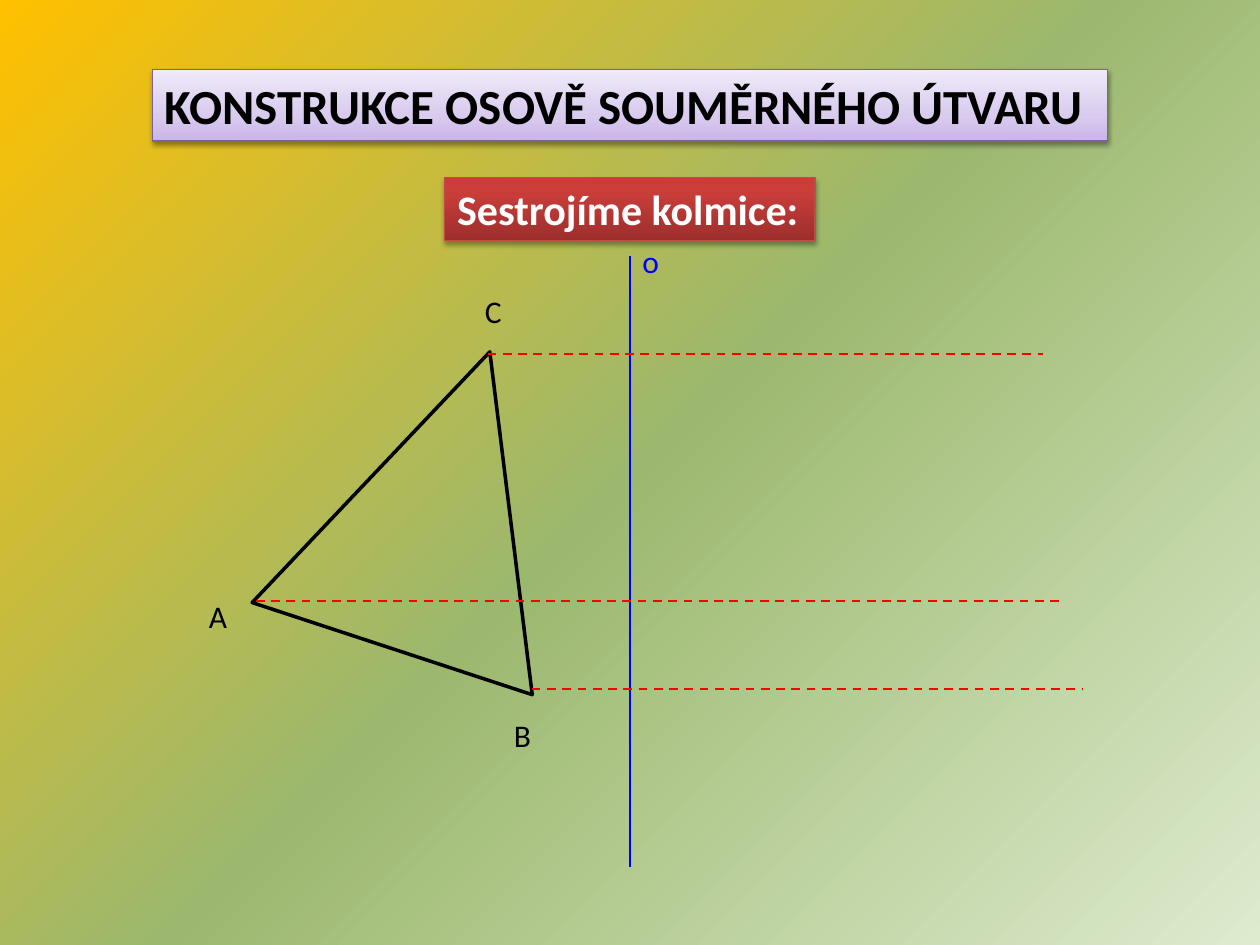
from lxml.etree import SubElement
from pptx import Presentation
from pptx.dml.color import RGBColor
from pptx.enum.dml import MSO_LINE
from pptx.enum.shapes import MSO_CONNECTOR, MSO_SHAPE
from pptx.enum.text import MSO_ANCHOR, MSO_AUTO_SIZE, PP_ALIGN
from pptx.oxml.ns import qn
from pptx.util import Inches, Pt

COLORS = {"black": "000000", "white": "FFFFFF", "axis": "0000FF",
          "perpendicular": "FF0000", "title_line": "7D60A0", "step_line": "BF4C48"}

# Gradient stops: position %, colour, opacity %
BACKGROUND = [(0, "DDEBCF", 100), (50, "9CB86E", 62), (100, "FFC000", 66)]
TITLE_FILL = [(0, "C9B5E8", 100), (35, "D8CBEE", 100), (100, "F0EAF9", 100)]
STEP_FILL = [(0, "9C2F2D", 100), (80, "CB3E3A", 100), (100, "CE3B37", 100)]

# Text, box, size, text colour, line colour, fill, shadow opacity % and distance pt
BANNERS = [
    ("KONSTRUKCE OSOVĚ SOUMĚRNÉHO ÚTVARU", (1.21, 0.55, 7.58, 0.57), 28,
     "black", "title_line", TITLE_FILL, 38, 1.6),
    ("Sestrojíme kolmice:", (3.53, 1.41, 2.94, 0.5), 24,
     "white", "step_line", STEP_FILL, 35, 1.8),
]
TRIANGLE = (2.33, 2.73, 2.34, 2.48)
TRIANGLE_TURN = 18.2
LABELS = [("A", 1.56, 4.69, 0.35, "black"), ("B", 3.98, 5.63, 0.39, "black"),
          ("C", 3.75, 2.27, 0.34, "black"), ("o", 5, 1.87, 0.34, "axis")]
AXIS = (5, 2.03, 5, 6.88)
PERPENDICULARS = [(3.87, 8.28, 2.81), (2.03, 8.44, 4.77), (4.22, 8.59, 5.47)]


def rgb(name):
    return RGBColor.from_string(COLORS[name])


def add_color(parent, color, opacity):
    clr = SubElement(parent, qn("a:srgbClr"), val=color)
    if opacity < 100:
        SubElement(clr, qn("a:alpha"), val=str(opacity * 1000))


def set_gradient(fill, element, stops, angle):
    fill.gradient()
    fill.gradient_angle = angle
    gs_lst = element.find(".//" + qn("a:gsLst"))
    for gs in list(gs_lst):
        gs_lst.remove(gs)
    for pos, color, opacity in stops:
        gs = SubElement(gs_lst, qn("a:gs"), pos=str(pos * 1000))
        add_color(gs, color, opacity)


def set_text(shape, text, size, color, bold=False):
    tf = shape.text_frame
    tf.text = text
    tf.word_wrap = True
    tf.auto_size = MSO_AUTO_SIZE.SHAPE_TO_FIT_TEXT
    tf.vertical_anchor = MSO_ANCHOR.TOP
    p = tf.paragraphs[0]
    p.alignment = PP_ALIGN.LEFT
    font = p.runs[0].font
    font.name, font.size, font.bold = "Calibri", Pt(size), bold
    font.color.rgb = rgb(color)


def add_line(s, x1, y1, x2, y2, color, dash=None):
    line = s.shapes.add_connector(MSO_CONNECTOR.STRAIGHT, *map(Inches, (x1, y1, x2, y2)))
    line.line.color.rgb = rgb(color)
    line.line.width = Pt(1.25)
    if dash:
        line.line.dash_style = dash
    SubElement(line._element.spPr, qn("a:effectLst"))


prs = Presentation()
prs.slide_width, prs.slide_height = Inches(10), Inches(7.5)
s = prs.slides.add_slide(prs.slide_layouts[6])
set_gradient(s.background.fill, s._element, BACKGROUND, 135)

# Title and step banners
for text, box, size, color, line, stops, opacity, dist in BANNERS:
    sp = s.shapes.add_shape(MSO_SHAPE.RECTANGLE, *map(Inches, box))
    set_gradient(sp.fill, sp._element.spPr, stops, 90)
    sp.line.color.rgb = rgb(line)
    sp.line.width = Pt(0.75)
    sp.shadow.inherit = False
    effects = sp._element.spPr.find(qn("a:effectLst"))
    shadow = SubElement(effects, qn("a:outerShdw"), blurRad=str(Pt(3.1)),
                        dist=str(Pt(dist)), dir="5400000", rotWithShape="0")
    add_color(shadow, COLORS["black"], opacity)
    set_text(sp, text, size, color, bold=True)

# Triangle ABC
tri = s.shapes.add_shape(MSO_SHAPE.FLOWCHART_EXTRACT, *map(Inches, TRIANGLE))
tri.rotation = TRIANGLE_TURN
tri.fill.background()
tri.line.color.rgb = rgb("black")
tri.line.width = Pt(2)
tri.shadow.inherit = False

# Axis, then perpendiculars through the vertices
add_line(s, *AXIS, "axis")
for x1, x2, y in PERPENDICULARS:
    add_line(s, x1, y, x2, y, "perpendicular", MSO_LINE.DASH)

# Vertex and axis labels
for text, x, y, w, color in LABELS:
    set_text(s.shapes.add_textbox(*map(Inches, (x, y, w, 0.4))), text, 18, color)

prs.save("out.pptx")
